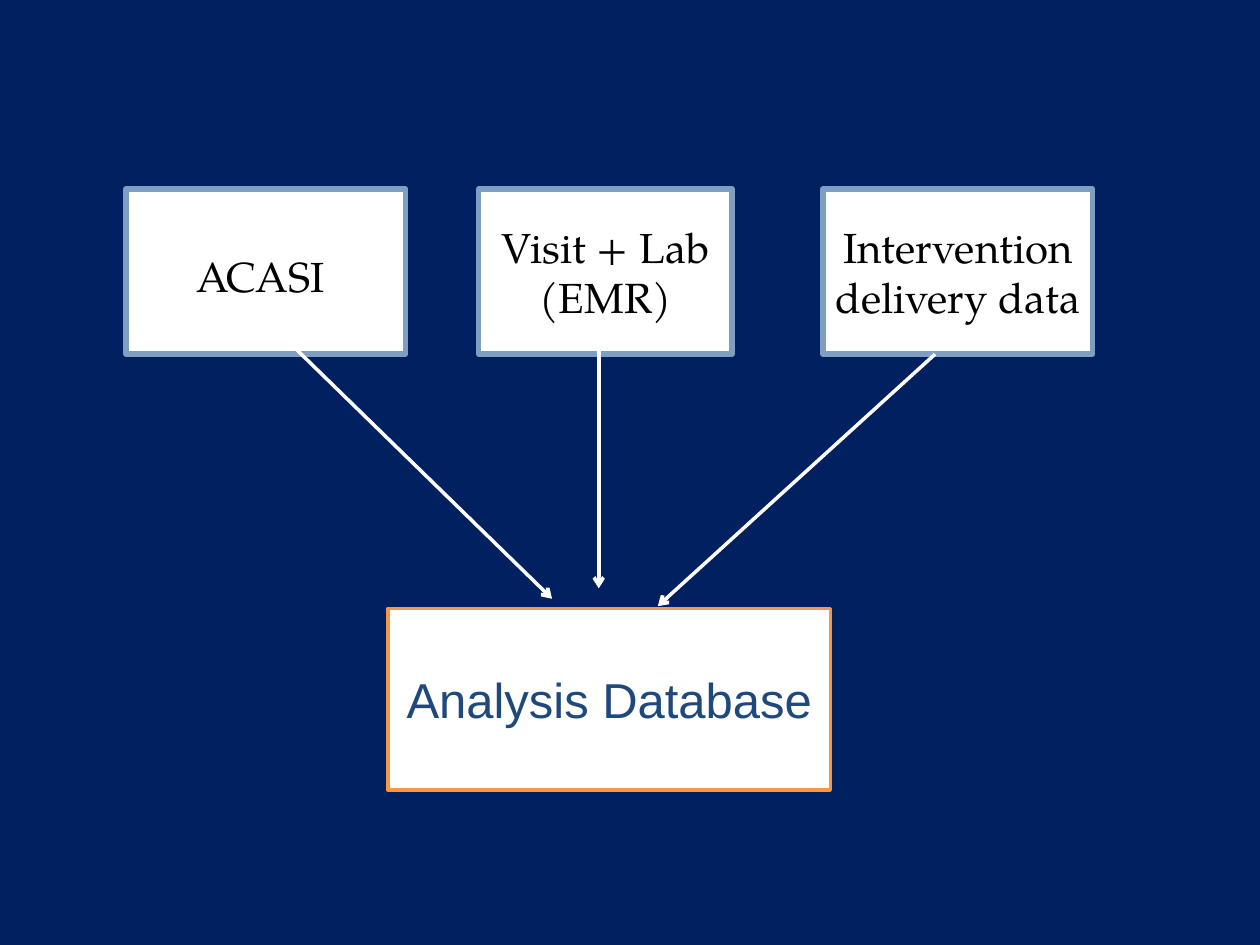
import pptx
import pptx.dml.color
import pptx.enum.shapes
import pptx.enum.text
import pptx.oxml
import pptx.oxml.ns
import pptx.util
from lxml import etree
from pptx.util import Cm, Pt

COLORS = {
    "navy": "002060",
    "white": "FFFFFF",
    "black": "000000",
    "steel": "809EC2",
    "orange": "F79646",
    "blue": "1F497D",
}
SERIF = "TeX Gyre Pagella"
SOURCE_HEIGHT = 3.33

# Left offset, width (cm) and lines of each data source
SOURCES = [
    (7.11, 5.11, ["Visit + Lab", "(EMR)"]),
    (14.05, 5.44, ["Intervention delivery data"]),
    (0, 5.64, ["ACASI "]),
]
# Start and end offsets (cm) of each arrow
FLOWS = [
    (3.38, 3.18, 8.59, 8.26),
    (9.53, 2.97, 9.53, 8.05),
    (16.31, SOURCE_HEIGHT, 10.72, 8.41),
]


def rgb(name):
    return pptx.dml.color.RGBColor.from_string(COLORS[name])


def add_box(page, left, top, width, height, lines, border, weight, font, size, color):
    """Add a white bordered box with centred text; lengths in cm."""
    box = page.shapes.add_shape(
        pptx.enum.shapes.MSO_SHAPE.RECTANGLE, Cm(left), Cm(top), Cm(width), Cm(height)
    )
    box.shadow.inherit = False
    box.fill.solid()
    box.fill.fore_color.rgb = rgb("white")
    box.line.color.rgb = rgb(border)
    box.line.width = Pt(weight)
    frame = box.text_frame
    frame.word_wrap = True
    frame.vertical_anchor = pptx.enum.text.MSO_ANCHOR.MIDDLE
    frame.text = "\n".join(lines)
    for para in frame.paragraphs:
        para.alignment = pptx.enum.text.PP_ALIGN.CENTER
        para.font.name = font
        para.font.size = Pt(size)
        para.font.color.rgb = rgb(color)
    return box


def add_arrow(page, start_x, start_y, end_x, end_y):
    """Add a white arrow; lengths in cm."""
    arrow = page.shapes.add_connector(
        pptx.enum.shapes.MSO_CONNECTOR.STRAIGHT,
        Cm(start_x), Cm(start_y), Cm(end_x), Cm(end_y),
    )
    arrow.line.color.rgb = rgb("white")
    arrow.line.width = Pt(2)
    outline = arrow.line._get_or_add_ln()
    etree.SubElement(outline, pptx.oxml.ns.qn("a:tailEnd"), type="arrow")
    etree.SubElement(arrow._element.spPr, pptx.oxml.ns.qn("a:effectLst"))


def add_sources(page, left, top):
    for offset, width, lines in SOURCES:
        box = add_box(page, left + offset, top, width, SOURCE_HEIGHT, lines,
                      "steel", 3, SERIF, 24, "black")
    # The last source, ACASI, has looser spacing
    para = box.text_frame.paragraphs[0]
    para.line_spacing = 1.15
    para.space_after = Pt(10)


def add_flows(page, left, top):
    for start_x, start_y, end_x, end_y in FLOWS:
        add_arrow(page, left + start_x, top + start_y, left + end_x, top + end_y)


def add_database(page, left, top):
    add_box(page, left, top, 8.92, 3.66, ["Analysis Database"],
            "orange", 2, "Arial", 28, "blue")


def main():
    deck = pptx.Presentation()
    deck.slide_width, deck.slide_height = Cm(25.4), Cm(19.05)
    page = deck.slides.add_slide(deck.slide_layouts.get_by_name("Blank"))
    page.background.fill.solid()
    page.background.fill.fore_color.rgb = rgb("navy")

    # Data sources flow down into one database
    left, top = 2.54, 3.81
    add_sources(page, left, top)
    add_flows(page, left, top)
    add_database(page, left + 5.28, top + 8.46)
    deck.save("out.pptx")


if __name__ == "__main__":
    main()
